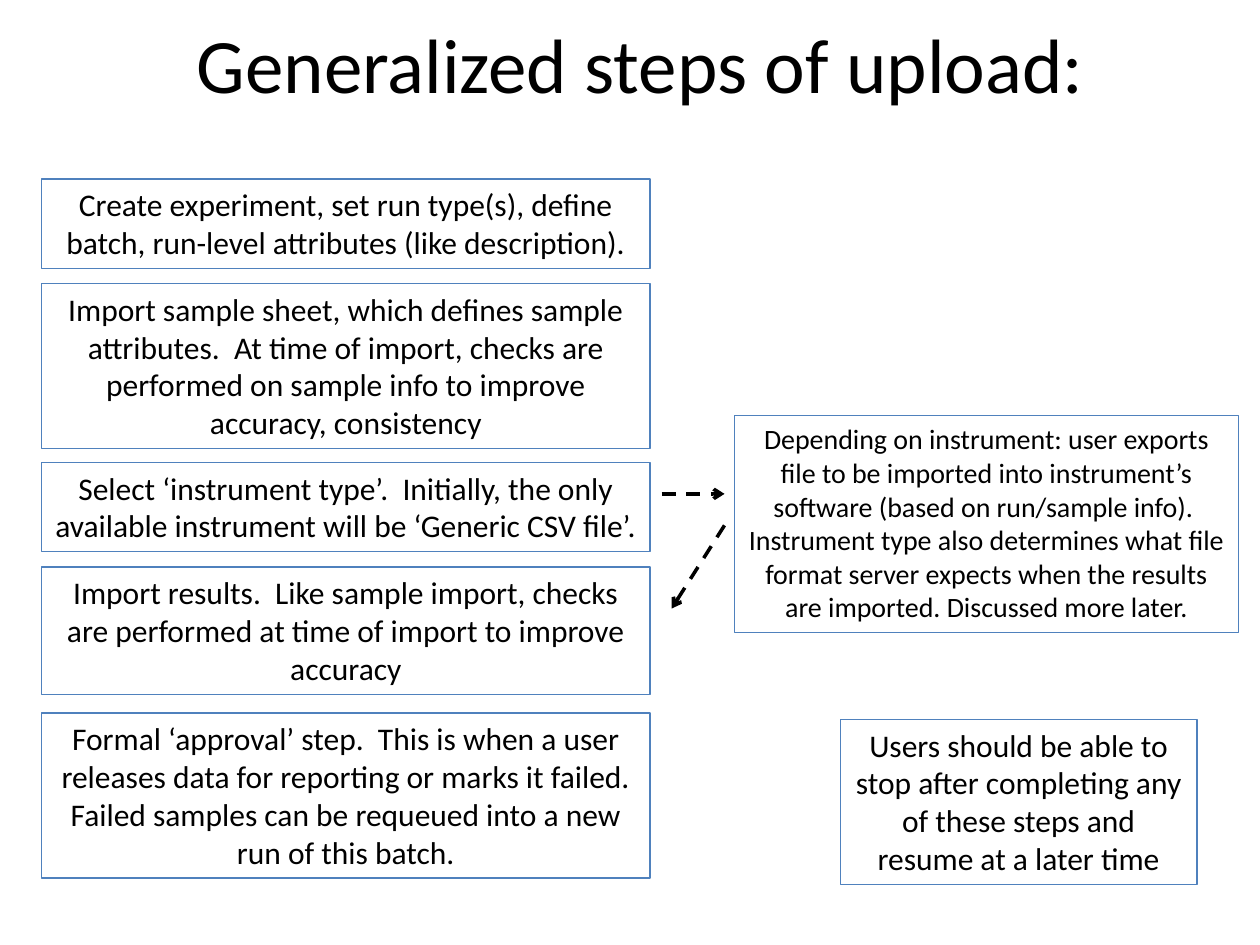
from lxml import etree
from pptx import Presentation
from pptx.dml.color import RGBColor
from pptx.enum import dml, shapes, text
from pptx.oxml.ns import qn
from pptx.util import Inches, Pt

COLORS = {"text": "000000", "border": "4F81BD", "arrow": "000000"}
FONT = "Calibri"

STEP_LEFT, STEP_WIDTH = 0.33, 4.83
# top, height, wording
STEPS = [
    (1.42, 0.71, "Create experiment, set run type(s), define batch, "
                 "run-level attributes (like description)."),
    (2.25, 1.31, "Import sample sheet, which defines sample attributes.  "
                 "At time of import, checks are performed on sample info "
                 "to improve accuracy, consistency"),
    (3.67, 0.71, "Select ‘instrument type’.  Initially, the only available "
                 "instrument will be ‘Generic CSV file’."),
    (4.5, 1.01, "Import results.  Like sample import, checks are performed "
                "at time of import to improve accuracy"),
    (5.66, 1.31, "Formal ‘approval’ step.  This is when a user releases data "
                 "for reporting or marks it failed. Failed samples can be "
                 "requeued into a new run of this batch."),
]
INSTRUMENT_NOTE = (
    "Depending on instrument: user exports file to be imported into "
    "instrument’s software (based on run/sample info).  Instrument type also "
    "determines what file format server expects when the results are "
    "imported. Discussed more later.")
RESUME_NOTE = ("Users should be able to stop after completing any of these "
               "steps and resume at a later time")


def rgb(name):
    return RGBColor.from_string(COLORS[name])


def write_centered(shape, wording, size):
    frame = shape.text_frame
    frame.text = wording
    frame.word_wrap = True
    para = frame.paragraphs[0]
    para.alignment = text.PP_ALIGN.CENTER
    for span in para.runs:
        span.font.name = FONT
        span.font.size = Pt(size)
        span.font.color.rgb = rgb("text")


def place_title(page, left, top, width, height):
    title = page.shapes.title
    title.left, title.top = Inches(left), Inches(top)
    title.width, title.height = Inches(width), Inches(height)
    write_centered(title, "Generalized steps of upload:", 44)
    title.text_frame.vertical_anchor = text.MSO_ANCHOR.TOP


def add_text_panel(page, left, top, width, height, wording, size=18):
    panel = page.shapes.add_shape(
        shapes.MSO_SHAPE.RECTANGLE,
        Inches(left), Inches(top), Inches(width), Inches(height))
    panel.shadow.inherit = False
    panel.fill.background()
    panel.line.color.rgb = rgb("border")
    panel.line.width = Pt(0.75)
    write_centered(panel, wording, size)
    panel.text_frame.vertical_anchor = text.MSO_ANCHOR.TOP
    panel.text_frame.auto_size = text.MSO_AUTO_SIZE.SHAPE_TO_FIT_TEXT


def add_dashed_arrow(page, start, end):
    arrow = page.shapes.add_connector(
        shapes.MSO_CONNECTOR.STRAIGHT,
        *(Inches(value) for value in (*start, *end)))
    arrow.line.color.rgb = rgb("arrow")
    arrow.line.width = Pt(2)
    arrow.line.dash_style = dml.MSO_LINE.DASH
    properties = arrow.element.spPr
    etree.SubElement(properties.find(qn("a:ln")), qn("a:tailEnd"), type="arrow")
    etree.SubElement(properties, qn("a:effectLst"))


def add_steps(page, left, width):
    for top, height, wording in STEPS:
        add_text_panel(page, left, top, width, height, wording)


def add_instrument_detour(page, left, top, width, height):
    """Note on the instrument, with arrows from step three and to step four."""
    add_text_panel(page, left, top, width, height, INSTRUMENT_NOTE, size=16)
    near = left - 0.08
    add_dashed_arrow(page, (left - 0.58, top + 0.62), (near, top + 0.62))
    add_dashed_arrow(page, (near, top + 0.87), (left - 0.5, top + 1.53))


def main():
    deck = Presentation()
    deck.slide_width, deck.slide_height = Inches(10), Inches(7.5)
    page = deck.slides.add_slide(deck.slide_layouts.get_by_name("Title Only"))
    place_title(page, 0.5, 0.08, 9.17, 1.25)
    add_steps(page, STEP_LEFT, STEP_WIDTH)
    add_instrument_detour(page, 5.83, 3.3, 4, 1.72)
    add_text_panel(page, 6.67, 5.71, 2.83, 1.31, RESUME_NOTE)
    deck.save("out.pptx")


if __name__ == "__main__":
    main()
